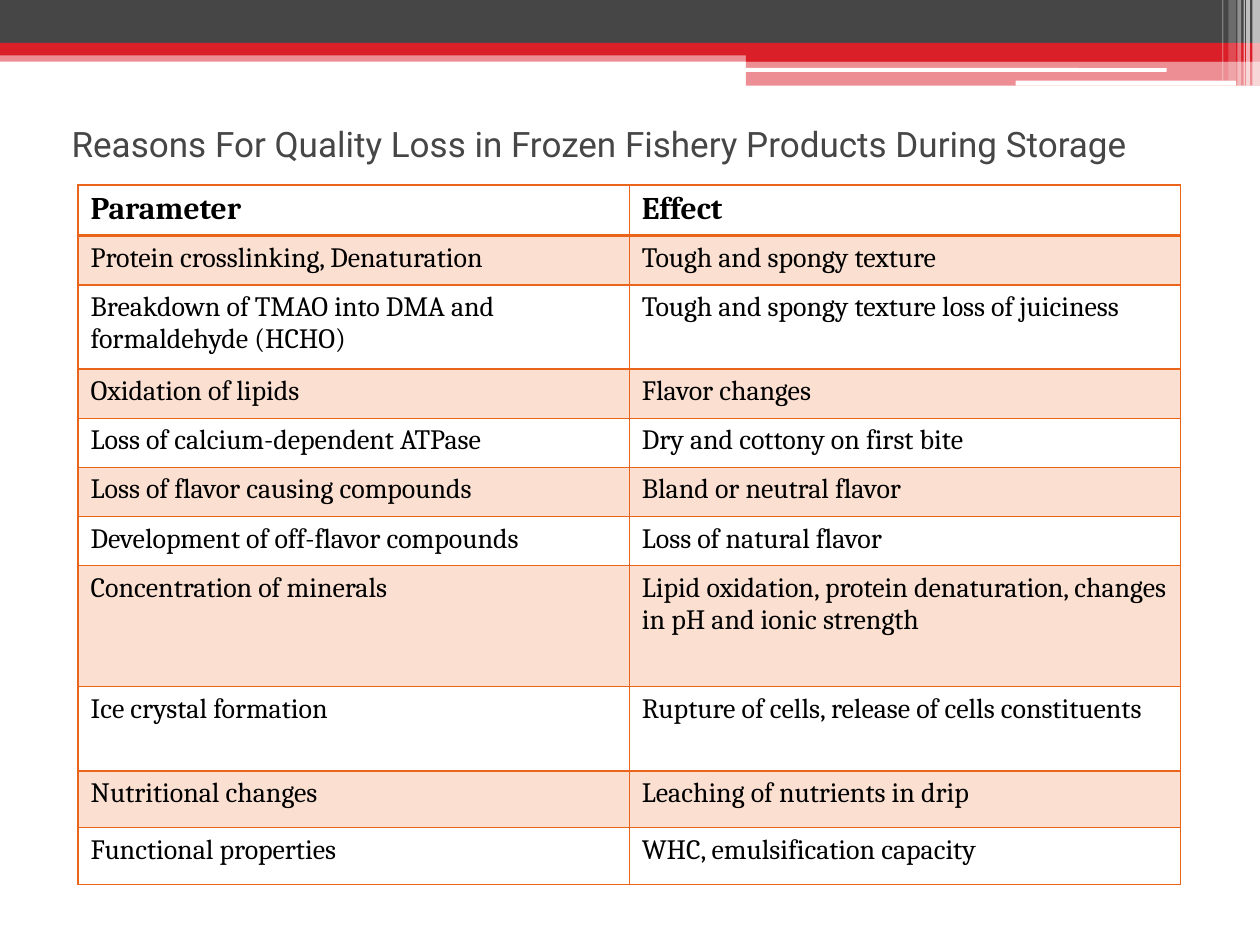
import pptx
import pptx.util
import pptx.dml.color
import pptx.enum.shapes
import pptx.enum.text
import pptx.oxml
import pptx.oxml.ns
import lxml.etree

Inches = pptx.util.Inches
SHAPE = pptx.enum.shapes.MSO_SHAPE
COLORS = {
    "red": "DA1F28", "gray": "464646", "white": "FFFFFF",
    "orange": "EB641B", "black": "000000",
}


class Deck:
    def __init__(self, width, height):
        self.prs = pptx.Presentation()
        self.prs.slide_width = Inches(width)
        self.prs.slide_height = Inches(height)
        self.slide = self.prs.slides.add_slide(self.prs.slide_layouts[6])

    def paint(self, fill, color, alpha=100):
        fill.solid()
        fill.fore_color.rgb = pptx.dml.color.RGBColor.from_string(COLORS[color])
        if alpha < 100:
            tag = pptx.oxml.ns.qn("a:srgbClr")
            for node in fill._xPr.iter(tag):
                lxml.etree.SubElement(
                    node, pptx.oxml.ns.qn("a:alpha"), val=str(alpha * 1000))

    def label(self, frame, text, size, font, color, bold=False):
        frame.text = text
        for run in frame.paragraphs[0].runs:
            run.font.size = pptx.util.Pt(size)
            run.font.name = font
            run.font.bold = bold
            run.font.color.rgb = pptx.dml.color.RGBColor.from_string(COLORS[color])

    def bar(self, x, y, w, h, color, alpha=100, kind=SHAPE.RECTANGLE):
        box = self.slide.shapes.add_shape(
            kind, Inches(x), Inches(y), Inches(w), Inches(h))
        box.shadow.inherit = False
        box.line.fill.background()
        self.paint(box.fill, color, alpha)

    def title(self, x, y, w, h, text):
        frame = self.slide.shapes.add_textbox(
            Inches(x), Inches(y), Inches(w), Inches(h)).text_frame
        frame.word_wrap = True
        frame.vertical_anchor = pptx.enum.text.MSO_ANCHOR.MIDDLE
        self.label(frame, text, 20, "Roboto", "gray")

    def border(self, cell, widths):
        props = cell._tc.get_or_add_tcPr()
        for spot, (side, width) in enumerate(widths.items()):
            line = pptx.oxml.parse_xml(
                f'<a:ln{side} {pptx.oxml.ns.nsdecls("a")} w="{pptx.util.Pt(width)}">'
                f'<a:solidFill><a:srgbClr val="{COLORS["orange"]}"/></a:solidFill>'
                f'</a:ln{side}>')
            props.insert(spot, line)

    def table(self, x, y, width, heights, rows):
        count = len(rows[0])
        grid = self.slide.shapes.add_table(
            len(rows), count, Inches(x), Inches(y),
            Inches(width), Inches(sum(heights))).table
        grid.first_row = grid.horz_banding = False
        for col in grid.columns:
            col.width = Inches(width / count)
        for r, (height, row) in enumerate(zip(heights, rows)):
            grid.rows[r].height = Inches(height)
            head = r == 0
            for c, text in enumerate(row):
                cell = grid.cell(r, c)
                self.label(cell.text_frame, text, 18 if head else 16,
                           "Cambria", "black", head)
                # Every second row is tinted
                if r % 2:
                    self.paint(cell.fill, "orange", 20)
                else:
                    cell.fill.background()
                self.border(cell, {"L": 1, "R": 1, "T": 2 if r == 1 else 1,
                                   "B": 2 if head else 1})

    def save(self):
        self.prs.save("out.pptx")


# Wide bands of the header: x, y, width, height, color, alpha
BANDS = [
    (0, 0.4, 10, 0.09, "red", 50),
    (0, 0, 10, 0.34, "gray", 100),
    (0, 0.34, 10, 0.1, "red", 100),
    (5.92, 0.39, 4.08, 0.1, "red", 100),
    (5.92, 0.48, 4.08, 0.2, "red", 50),
]
# White rounded strips: x, y, width, height
STRIPS = [(5.91, 0.54, 3.35, 0.03), (8.06, 0.64, 1.75, 0.04)]
# Upright stripes at the right edge: x, width, height, alpha
STRIPES = [
    (9.94, 0.06, 0.68, 65), (9.89, 0.03, 0.68, 65), (9.87, 0.01, 0.68, 60),
    (9.82, 0.03, 0.68, 40), (9.75, 0.06, 0.64, 20), (9.7, 0.01, 0.64, 30),
]
ROWS = [
    ("Parameter", "Effect"),
    ("Protein crosslinking, Denaturation", "Tough and spongy texture"),
    ("Breakdown of TMAO into DMA and formaldehyde (HCHO)",
     "Tough and spongy texture loss of juiciness"),
    ("Oxidation of lipids", "Flavor changes"),
    ("Loss of calcium-dependent ATPase", "Dry and cottony on first bite"),
    ("Loss of flavor causing compounds", "Bland or neutral flavor"),
    ("Development of off-flavor compounds", "Loss of natural flavor"),
    ("Concentration of minerals",
     "Lipid oxidation, protein denaturation, changes in pH and ionic strength"),
    ("Ice crystal formation", "Rupture of cells, release of cells constituents"),
    ("Nutritional changes", "Leaching of nutrients in drip"),
    ("Functional properties", "WHC, emulsification capacity"),
]
HEIGHTS = [0.39, 0.39, 0.67, 0.39, 0.39, 0.39, 0.39, 0.96, 0.67, 0.45, 0.45]


def main():
    deck = Deck(10, 7.5)
    # Header
    for band in BANDS:
        deck.bar(*band)
    for strip in STRIPS:
        deck.bar(*strip, "white", kind=SHAPE.ROUNDED_RECTANGLE)
    for x, width, height, alpha in STRIPES:
        deck.bar(x, 0, width, height, "white", alpha)
    # Title and table
    deck.title(0.47, 0.55, 9, 1.17,
               "Reasons For Quality Loss in Frozen Fishery Products During Storage")
    deck.table(0.62, 1.47, 8.75, HEIGHTS, ROWS)
    deck.save()


if __name__ == "__main__":
    main()
